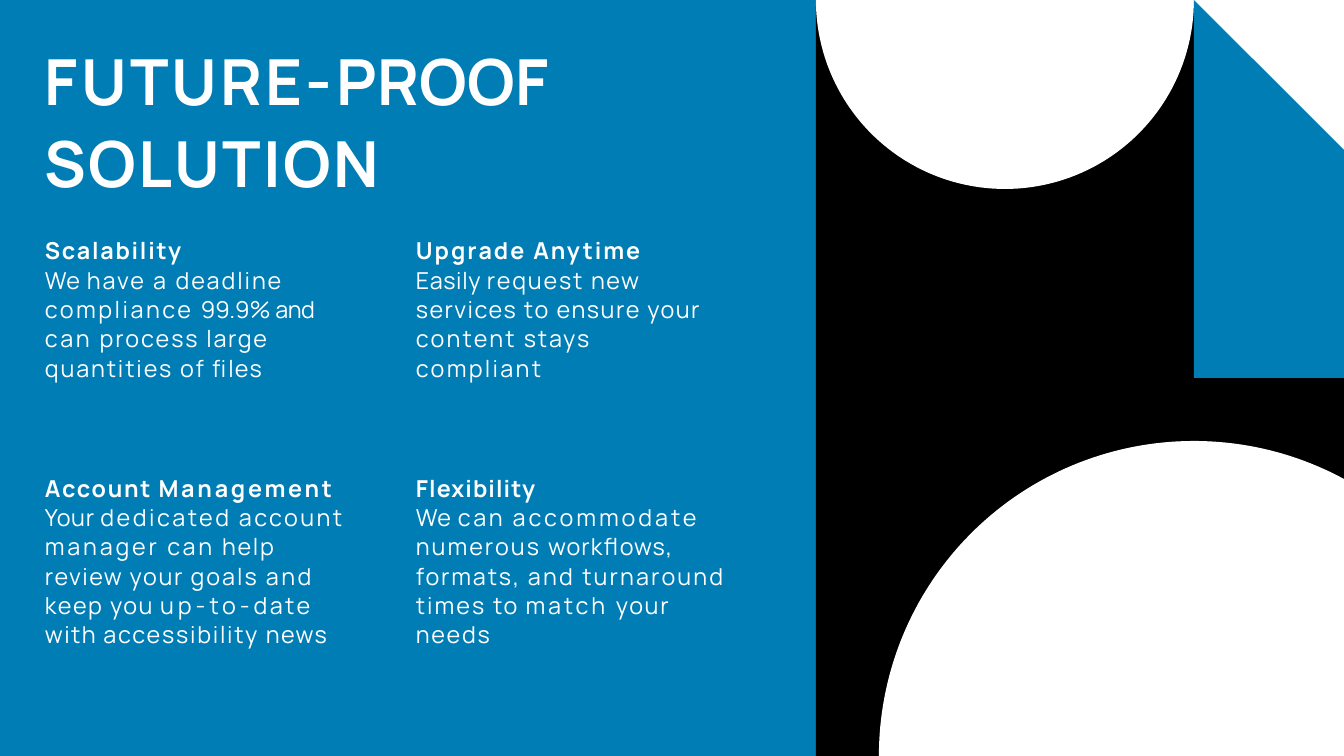
import math
from dataclasses import dataclass

from pptx import Presentation
from pptx import util as u
from pptx.dml.color import RGBColor
from pptx.enum import shapes, text


@dataclass(frozen=True)
class Theme:
    """Colours, font and type sizes of the slide."""
    blue: RGBColor = RGBColor.from_string("007DB4")
    black: RGBColor = RGBColor.from_string("000000")
    white: RGBColor = RGBColor.from_string("FFFFFF")
    font: str = "Manrope"
    title: int = 68
    body: int = 25


THEME = Theme()
WIDTH, HEIGHT = 50.8, 28.58
MODULE = HEIGHT / 4
PANEL_X = 30.84
CORNER_X = PANEL_X + 2 * MODULE
COLUMNS = (1.7, 15.72)
ROWS = (8.86, 17.83)

TITLE = [("FUTURE-", 3.4), ("PROOF ", 0.5), ("SOLUTION", 2.5)]

# Each benefit: column, row, width, height, heading and body as (words, tracking).
BENEFITS = [
    (0, 0, 10.21, 6.76, [("Scalability", 1.9)],
     [("We ", 1.2), ("have", 2.1), (" a ", 2.6), ("deadline ", 2.1), ("compliance ", 2.7),
      ("99.9% ", 0), ("and ", -0.5), ("can ", 2.8), ("process ", 2.1), ("large ", 1.9),
      ("quantities ", 2), ("of ", 1.9), ("files", 1.2)]),
    (0, 1, 11.91, 7.87, [("Account ", 1.8), ("Management", 3)],
     [("Your ", 0.8), ("dedicated ", 2.7), ("account ", 2.6), ("manager ", 3), ("can ", 2.8),
      ("help ", 1.9), ("review ", 1.6), ("your ", 1.8), ("goals ", 2.2), ("and ", 2.8),
      ("keep ", 1.8), ("you ", 1.6), ("up-", 4.3), ("to-", 4.1), ("date ", 2.7),
      ("with ", 1.6), ("accessibility ", 1.9), ("news", 1.6)]),
    (1, 0, 11.28, 5.64, [("Upgrade ", 2.2), ("Anytime", 2.1)],
     [("Easily ", 0.7), ("request ", 2), ("new ", 1.7), ("services ", 1.6), ("to ", 2),
      ("ensure ", 1.7), ("your ", 1.6), ("content ", 2.4), ("stays ", 1.9),
      ("compliant", 2.5)]),
    (1, 1, 12.22, 6.76, [("Flexibility", 1.2)],
     [("We ", 1.2), ("can ", 2.8), ("accommodate ", 3.2), ("numerous ", 2.2),
      ("workflows, ", 1.2), ("formats, ", 2), ("and ", 2.5), ("turnaround ", 2.3),
      ("times ", 2.2), ("to ", 1.8), ("match ", 3.1), ("your ", 1.8), ("needs", 1.9)]),
]


def paint(shape, color):
    """Give a shape a flat fill with no line or shadow."""
    shape.shadow.inherit = False
    shape.fill.solid()
    shape.fill.fore_color.rgb = color
    shape.line.fill.background()


def add_block(slide, left, top, width, height, color):
    """Add a plain coloured rectangle."""
    block = slide.shapes.add_shape(shapes.MSO_SHAPE.RECTANGLE, u.Cm(left), u.Cm(top),
                                   u.Cm(width), u.Cm(height))
    paint(block, color)


def add_outline(slide, contours, color):
    """Add one filled outline made of closed contours."""
    builder = None
    for contour in contours:
        start, *rest = [(u.Cm(x), u.Cm(y)) for x, y in contour]
        if builder is None:
            builder = slide.shapes.build_freeform(*start, scale=1.0)
        else:
            builder.move_to(*start)
        builder.add_line_segments(rest, close=True)
    paint(builder.convert_to_shape(), color)


def arc(center_x, center_y, radius, start, end, steps=90):
    """Return points along a circle between two angles in radians."""
    angles = [start + (end - start) * i / steps for i in range(steps + 1)]
    return [(center_x + radius * math.cos(a), center_y + radius * math.sin(a)) for a in angles]


def add_text_frame(slide, left, top, width, height):
    """Add a wrapping text box without side margins and return its frame."""
    frame = slide.shapes.add_textbox(u.Cm(left), u.Cm(top), u.Cm(width), u.Cm(height)).text_frame
    frame.word_wrap = True
    frame.auto_size = text.MSO_AUTO_SIZE.SHAPE_TO_FIT_TEXT
    frame.margin_left = frame.margin_right = frame.margin_bottom = 0
    frame.margin_top = u.Cm(0.03)
    return frame


def write(paragraph, words, size, bold, line_spacing, space_before=0):
    """Fill a paragraph with individually tracked words."""
    paragraph.line_spacing = line_spacing
    paragraph.space_before = u.Pt(space_before)
    font = paragraph.font
    font.name, font.size, font.bold = THEME.font, u.Pt(size), bold
    font.color.rgb = THEME.white
    for word, tracking in words:
        run = paragraph.add_run()
        run.text = word
        run._r.get_or_add_rPr().set("spc", str(round(tracking * 100)))


def add_artwork(slide):
    """Draw the geometric panel on the right."""
    add_block(slide, CORNER_X, 0, WIDTH - CORNER_X, 2 * MODULE, THEME.white)
    add_outline(slide, [[(PANEL_X, 0), (CORNER_X, 0), (CORNER_X, 2 * MODULE),
                         (WIDTH, 2 * MODULE), (WIDTH, HEIGHT), (PANEL_X, HEIGHT)]], THEME.black)
    radius = MODULE * 5 / 3
    edge_angle = -math.acos((WIDTH - CORNER_X) / radius)
    half_disc = arc(PANEL_X + MODULE, 0, MODULE, 0, math.pi)
    cut_disc = arc(CORNER_X, HEIGHT, radius, edge_angle, -math.pi) + [(WIDTH, HEIGHT)]
    add_outline(slide, [half_disc, cut_disc], THEME.white)
    add_outline(slide, [[(CORNER_X, 0), (WIDTH, WIDTH - CORNER_X), (WIDTH, 2 * MODULE),
                         (CORNER_X, 2 * MODULE)]], THEME.blue)


def add_benefit(slide, column, row, width, height, heading, body):
    """Add a heading with its description."""
    frame = add_text_frame(slide, COLUMNS[column], ROWS[row], width, height)
    write(frame.paragraphs[0], heading, THEME.body, True, 1.05, 1)
    write(frame.add_paragraph(), body, THEME.body, False, 1.05)


def main():
    """Build and save the slide."""
    deck = Presentation()
    deck.slide_width, deck.slide_height = u.Cm(WIDTH), u.Cm(HEIGHT)
    slide = deck.slides.add_slide(deck.slide_layouts[6])
    add_block(slide, 0, 0, WIDTH, HEIGHT, THEME.blue)
    add_artwork(slide)
    title = add_text_frame(slide, COLUMNS[0], 1.37, 20.22, 6.25)
    write(title.paragraphs[0], TITLE, THEME.title, True, 1.07, 0.9)
    for benefit in BENEFITS:
        add_benefit(slide, *benefit)
    deck.save("out.pptx")


if __name__ == "__main__":
    main()
